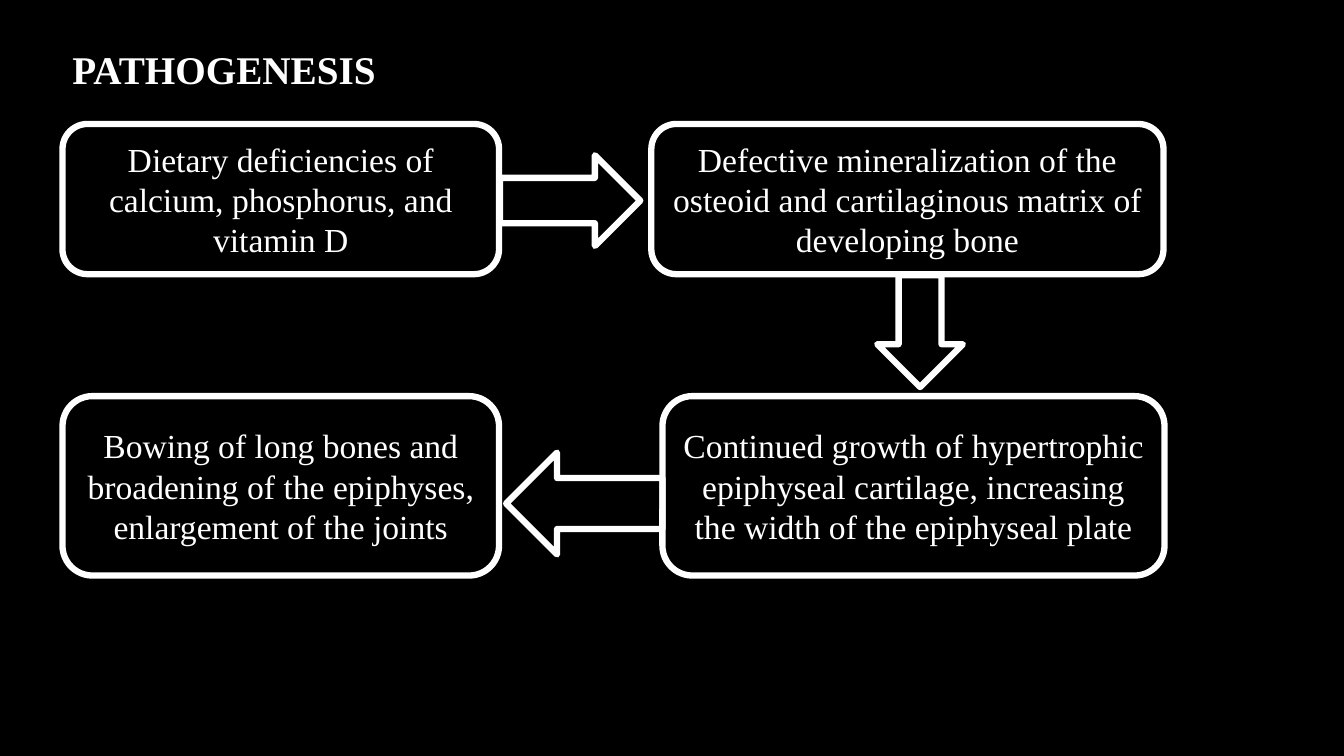
from pptx import Presentation
from pptx.dml.color import RGBColor
from pptx.enum.shapes import MSO_SHAPE
from pptx.enum.text import MSO_ANCHOR, MSO_AUTO_SIZE, PP_ALIGN
from pptx.util import Emu, Pt

EMU_PER_PX = 9144
BLACK = RGBColor(0x00, 0x00, 0x00)
WHITE = RGBColor(0xFF, 0xFF, 0xFF)
FONT = "Times New Roman"

LEFT_COLUMN, LEFT_WIDTH = 62, 433
TOP_ROW, TOP_HEIGHT = 123, 149
BOTTOM_ROW, BOTTOM_HEIGHT = 393, 178

STAGES = [
    (LEFT_COLUMN, TOP_ROW, LEFT_WIDTH, TOP_HEIGHT,
     "Dietary deficiencies of calcium, phosphorus, and vitamin D"),
    (646, TOP_ROW, 508, TOP_HEIGHT,
     "Defective mineralization of the osteoid and cartilaginous matrix of developing bone"),
    (657, BOTTOM_ROW, 498, BOTTOM_HEIGHT,
     "Continued growth of hypertrophic epiphyseal cartilage, increasing the width of the epiphyseal plate"),
    (LEFT_COLUMN, BOTTOM_ROW, LEFT_WIDTH, BOTTOM_HEIGHT,
     "Bowing of long bones and broadening of the epiphyses, enlargement of the joints"),
]

STEPS = [
    (496, 154, 139, 90, 0),
    (857, 286, 111, 85, 90),
    (502, 449, 155, 101, 180),
]


def px(*lengths):
    return [Emu(length * EMU_PER_PX) for length in lengths]


def write(frame, text, size, bold=False):
    frame.word_wrap = True
    paragraph = frame.paragraphs[0]
    paragraph.text = text
    font = paragraph.runs[0].font
    font.name = FONT
    font.size = Pt(size)
    font.bold = bold
    font.color.rgb = WHITE
    return paragraph


def add_outline(slide, preset, left, top, width, height):
    outline = slide.shapes.add_shape(preset, *px(left, top, width, height))
    outline.shadow.inherit = False
    outline.fill.background()
    outline.line.color.rgb = WHITE
    outline.line.width = Pt(4.5)
    return outline


def add_stage(slide, left, top, width, height, text):
    stage = add_outline(slide, MSO_SHAPE.ROUNDED_RECTANGLE, left, top, width, height)
    stage.text_frame.vertical_anchor = MSO_ANCHOR.MIDDLE
    write(stage.text_frame, text, 24).alignment = PP_ALIGN.CENTER


def add_step(slide, left, top, width, height, rotation):
    step = add_outline(slide, MSO_SHAPE.RIGHT_ARROW, left, top, width, height)
    step.rotation = rotation


def add_title(slide, text):
    title = slide.shapes.add_textbox(*px(LEFT_COLUMN, 40, 667, 57))
    write(title.text_frame, text, 28, bold=True)
    title.text_frame.auto_size = MSO_AUTO_SIZE.SHAPE_TO_FIT_TEXT


def main():
    deck = Presentation()
    deck.slide_width, deck.slide_height = px(1333, 750)
    slide = deck.slides.add_slide(deck.slide_layouts[6])
    slide.background.fill.solid()
    slide.background.fill.fore_color.rgb = BLACK
    for stage in STAGES:
        add_stage(slide, *stage)
    for step in STEPS:
        add_step(slide, *step)
    add_title(slide, "PATHOGENESIS")
    deck.save("out.pptx")


if __name__ == "__main__":
    main()
